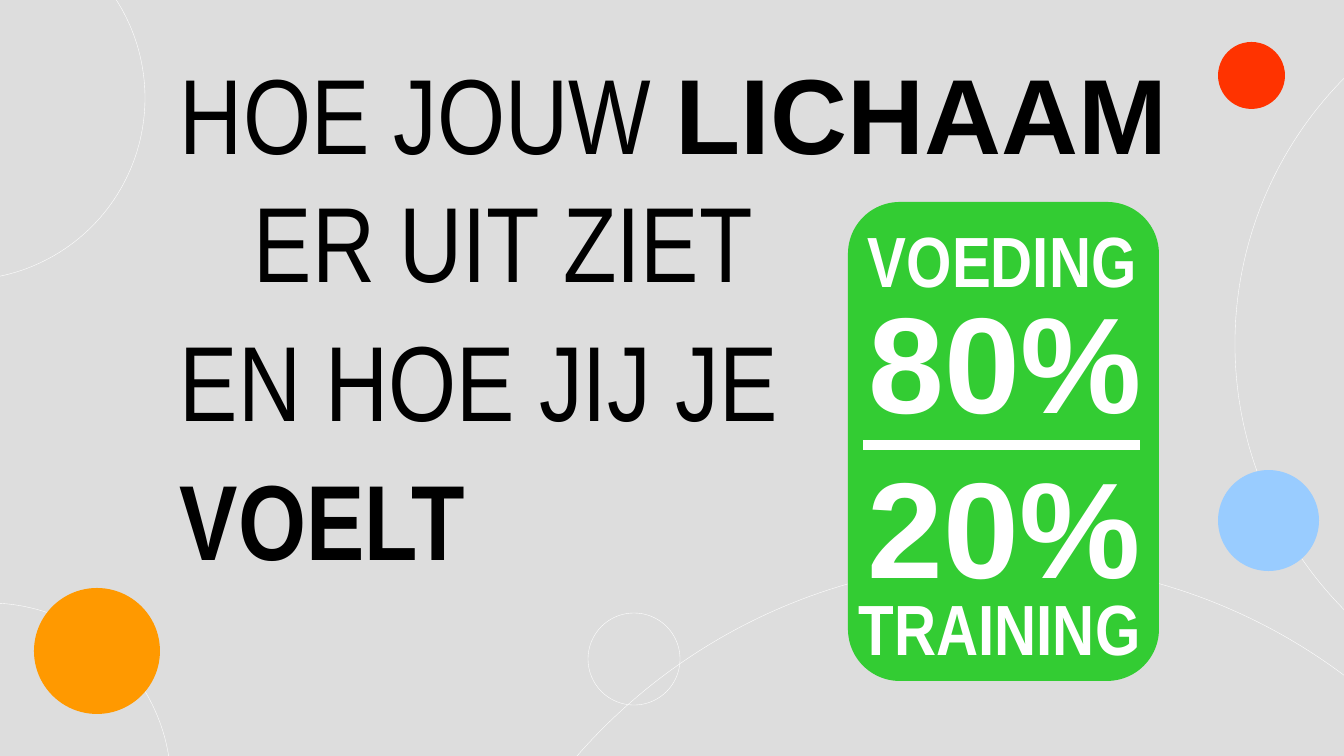
from lxml.etree import SubElement
from pptx import Presentation
from pptx.dml.color import RGBColor
from pptx.enum.shapes import MSO_CONNECTOR, MSO_SHAPE
from pptx.enum.text import MSO_AUTO_SIZE
from pptx.oxml.ns import qn
from pptx.util import Emu, Pt

EMU_PER_PX = 8572.5
SLIDE_W, SLIDE_H = 1344, 756
NARROW, WIDE = "Arial Narrow", "Arial"


def px(n):
    return Emu(round(n * EMU_PER_PX))


def color(hex_text):
    return RGBColor.from_string(hex_text)


def add_figure(s, preset, x, y, w, h, fill=None):
    sp = s.shapes.add_shape(preset, px(x), px(y), px(w), px(h))
    sp.shadow.inherit = False
    if fill:
        sp.fill.solid()
        sp.fill.fore_color.rgb = color(fill)
        sp.line.fill.background()
    else:
        sp.fill.background()
        sp.line.color.rgb = color("FFFFFF")
        sp.line.width = Pt(0.25)
    return sp


def add_circle(s, x, y, d, fill=None):
    return add_figure(s, MSO_SHAPE.OVAL, x, y, d, d, fill)


def add_text_frame(s, x, y, w, h, inset_x, inset_y):
    tf = s.shapes.add_textbox(px(x), px(y), px(w), px(h)).text_frame
    tf.word_wrap = True
    tf.auto_size = MSO_AUTO_SIZE.SHAPE_TO_FIT_TEXT
    tf.margin_left = tf.margin_right = px(inset_x)
    tf.margin_top = tf.margin_bottom = px(inset_y)
    return tf


def add_run(p, text, font, size, hex_text, bold):
    r = p.add_run()
    r.text = text
    r.font.name = font
    r.font.size = Pt(size)
    r.font.bold = bold
    r.font.color.rgb = color(hex_text)


def add_statement(s, x, y, w, h):
    tf = add_text_frame(s, x, y, w, h, 12, 6)
    lines = [
        (0, 0, [("HOE JOUW ", NARROW, False), ("LICHAAM", WIDE, True)]),
        (0, 74, [("ER UIT ZIET", NARROW, False)]),
        (7.2, 0, [("EN HOE JIJ JE", NARROW, False)]),
        (7.2, 0, [("VOELT", NARROW, True)]),
    ]
    for i, (before, indent, runs) in enumerate(lines):
        p = tf.paragraphs[0] if i == 0 else tf.add_paragraph()
        p.space_before = Pt(before)
        if indent:
            p._p.get_or_add_pPr().set("marL", str(px(indent)))
        for text, font, bold in runs:
            add_run(p, text, font, 72, "000000", bold)


def add_ratio_card(s, x, y, w, h):
    add_figure(s, MSO_SHAPE.FLOWCHART_ALTERNATE_PROCESS, x, y, w, h, "33CC33")
    labels = [
        ("VOEDING", NARROW, 48, 9, 9, 403, 96),
        ("80%", WIDE, 92, 10, 70, 318, 174),
        ("20%", WIDE, 92, 9, 235, 318, 174),
        ("TRAINING", NARROW, 48, 0, 377, 403, 96),
    ]
    for text, font, size, dx, dy, lw, lh in labels:
        tf = add_text_frame(s, x + dx, y + dy, lw, lh, 11, 5)
        add_run(tf.paragraphs[0], text, font, size, "FFFFFF", True)
    bar_y = px(y + 243)
    bar = s.shapes.add_connector(
        MSO_CONNECTOR.STRAIGHT, px(x + 15), bar_y, px(x + w - 19), bar_y)
    bar.line.color.rgb = color("FFFFFF")
    bar.line.width = Pt(6.75)
    SubElement(bar._element.spPr, qn("a:effectLst"))


def add_rings(s):
    for x, y, d in [(1235, -34, 756), (-219, -84, 364), (588, 613, 92),
                    (437, 562, 1134), (-193, 603, 364)]:
        add_circle(s, x, y, d)


def add_dots(s):
    for x, y, d, fill in [(1218, 470, 101, "99CCFF"), (1218, 42, 67, "FF3300"),
                          (34, 588, 126, "FF9900")]:
        add_circle(s, x, y, d, fill)


def main():
    prs = Presentation()
    prs.slide_width, prs.slide_height = px(SLIDE_W), px(SLIDE_H)
    s = prs.slides.add_slide(prs.slide_layouts[6])
    s.background.fill.solid()
    s.background.fill.fore_color.rgb = color("DDDDDD")
    add_rings(s)
    add_statement(s, 168, 42, 1075, 549)
    add_dots(s)
    add_ratio_card(s, 848, 202, 311, 479)
    prs.save("out.pptx")


if __name__ == "__main__":
    main()
